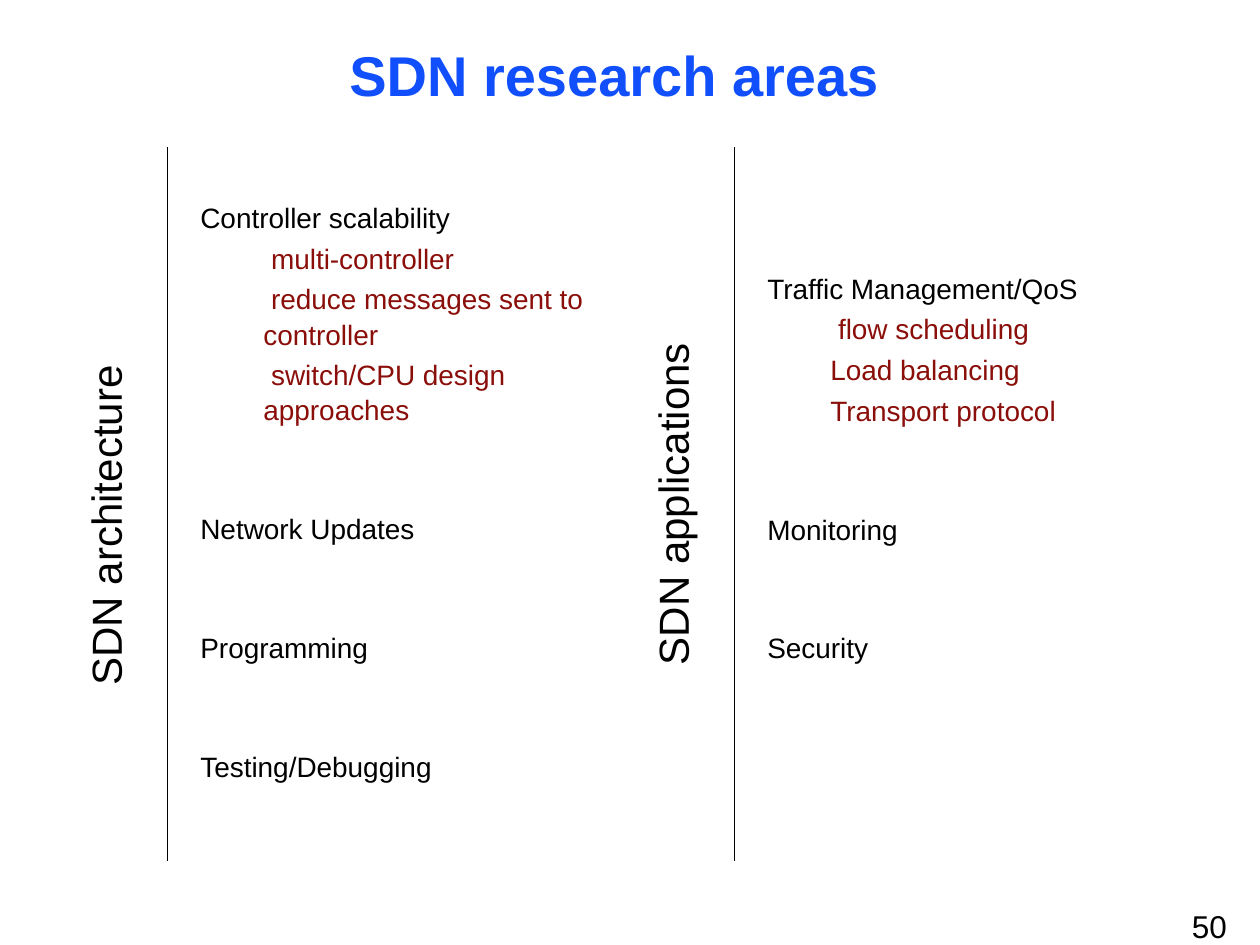
from lxml import etree
from pptx import Presentation
from pptx.dml.color import RGBColor
from pptx.enum.shapes import MSO_CONNECTOR
from pptx.enum.text import MSO_ANCHOR, PP_ALIGN
from pptx.oxml.ns import qn
from pptx.util import Inches, Pt

STRAIGHT = MSO_CONNECTOR.STRAIGHT
TOP, MIDDLE = MSO_ANCHOR.TOP, MSO_ANCHOR.MIDDLE
LEFT, CENTER = PP_ALIGN.LEFT, PP_ALIGN.CENTER

COLORS = {"title": "104FFB", "text": "000000", "detail": "8A0E09"}
TOPIC_SIZE = 16
LINE_SPACING = 1.05
SPACE_BEFORE = 3.1
TOPIC_GAP = 47.8

ARCHITECTURE = [
    ("Controller scalability", [
        " multi-controller",
        " reduce messages sent to controller",
        " switch/CPU design approaches",
    ]),
    ("Network Updates", []),
    ("Programming", []),
    ("Testing/Debugging", []),
]
APPLICATIONS = [
    ("Traffic Management/QoS", [
        " flow scheduling",
        "Load balancing",
        "Transport protocol",
    ]),
    ("Monitoring", []),
    ("Security", []),
]


class SlideBuilder:
    font = "Arial"

    def __init__(self, slide):
        self.slide = slide

    def box(self, left, top, width, height, inset=0, anchor=TOP):
        box = self.slide.shapes.add_textbox(
            Inches(left), Inches(top), Inches(width), Inches(height))
        frame = box.text_frame
        frame.word_wrap = True
        frame.vertical_anchor = anchor
        frame.margin_left = frame.margin_right = Inches(2 * inset)
        frame.margin_top = frame.margin_bottom = Inches(inset)
        return box

    def set_text(self, para, text, size, color="text", bold=False, align=LEFT):
        para.text = text
        para.alignment = align
        for span in para.runs:
            span.font.name = self.font
            span.font.size = Pt(size)
            span.font.bold = bold
            span.font.color.rgb = RGBColor.from_string(COLORS[color])

    def title(self, text):
        box = self.box(0.25, 0.28, 9.25, 0.57, anchor=MIDDLE)
        box.text_frame.margin_top = Inches(0.04)
        self.set_text(box.text_frame.paragraphs[0], text, 32, "title", True, CENTER)

    def page_number(self, text):
        box = self.box(9.43, 7.2, 0.33, 0.3)
        box.text_frame.margin_left = Inches(0.03)
        self.set_text(box.text_frame.paragraphs[0], text, 18)

    def side_label(self, text, left, top, width):
        box = self.box(left, top, width, 0.5, inset=0.05)
        box.rotation = 270
        self.set_text(box.text_frame.paragraphs[0], text, 24, align=CENTER)

    def topics(self, topics, left, top, width, height):
        frame = self.box(left, top, width, height).text_frame
        for index, (topic, details) in enumerate(topics):
            para = frame.add_paragraph() if index else frame.paragraphs[0]
            self.set_text(para, topic, TOPIC_SIZE)
            para.line_spacing = LINE_SPACING
            para.space_before = Pt(TOPIC_GAP if index else SPACE_BEFORE)
            for detail in details:
                para = frame.add_paragraph()
                self.set_text(para, detail, TOPIC_SIZE, "detail")
                para.line_spacing = LINE_SPACING
                para.space_before = Pt(SPACE_BEFORE)
                para.level = 1
                properties = para._p.get_or_add_pPr()
                properties.set("marL", str(Inches(0.5)))
                properties.set("indent", "0")

    def divider(self, x):
        line = self.slide.shapes.add_connector(
            STRAIGHT, Inches(x), Inches(1.17), Inches(x), Inches(6.83))
        line.line.width = Pt(0.75)
        line.line.color.rgb = RGBColor.from_string(COLORS["text"])
        etree.SubElement(line._element.spPr, qn("a:effectLst"))


def main():
    deck = Presentation()
    deck.slide_width, deck.slide_height = Inches(10), Inches(7.5)
    page = SlideBuilder(deck.slides.add_slide(deck.slide_layouts[6]))
    page.title("SDN research areas")
    page.topics(ARCHITECTURE, 1.59, 1.58, 3.58, 4.66)
    page.topics(APPLICATIONS, 6.09, 2.14, 3.83, 3.48)
    page.page_number("50")
    page.side_label("SDN architecture", -1.83, 3.92, 5.33)
    page.side_label("SDN applications", 1.75, 3.75, 7.17)
    for x in (1.33, 5.83):
        page.divider(x)
    deck.save("out.pptx")


if __name__ == "__main__":
    main()
